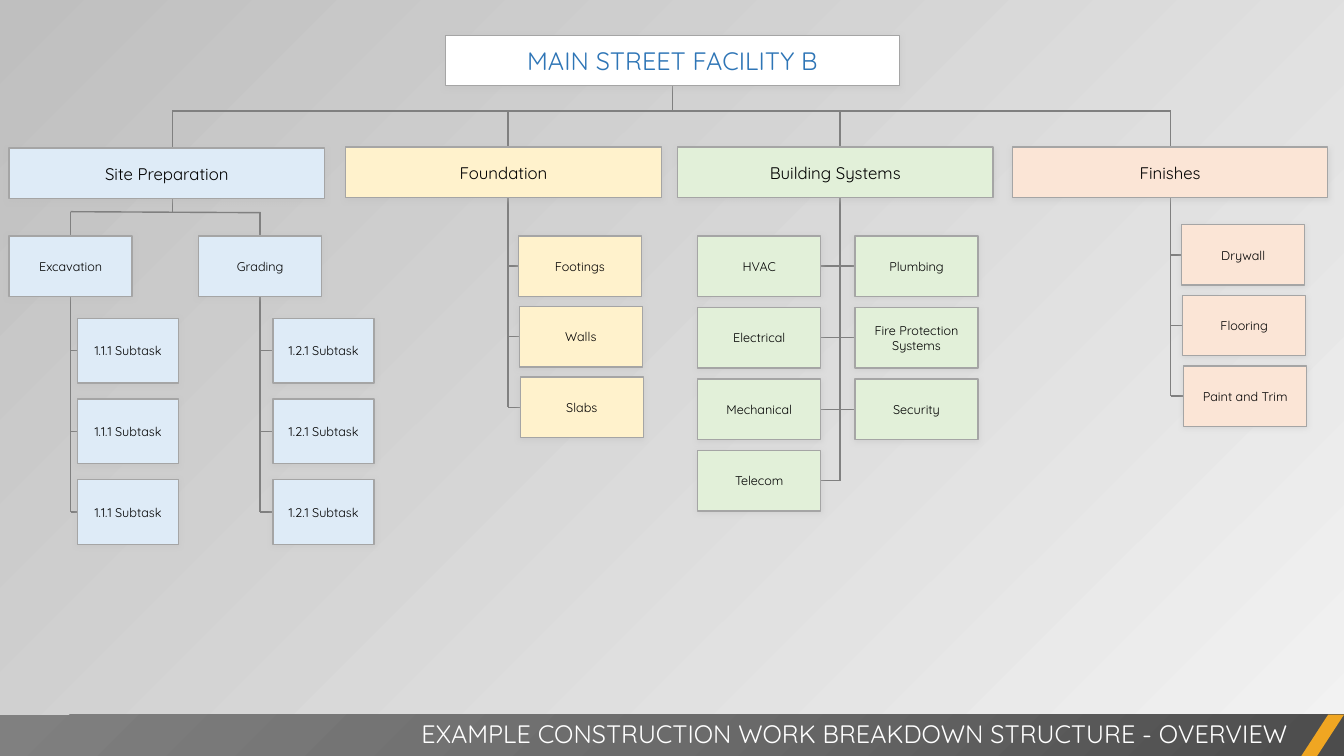
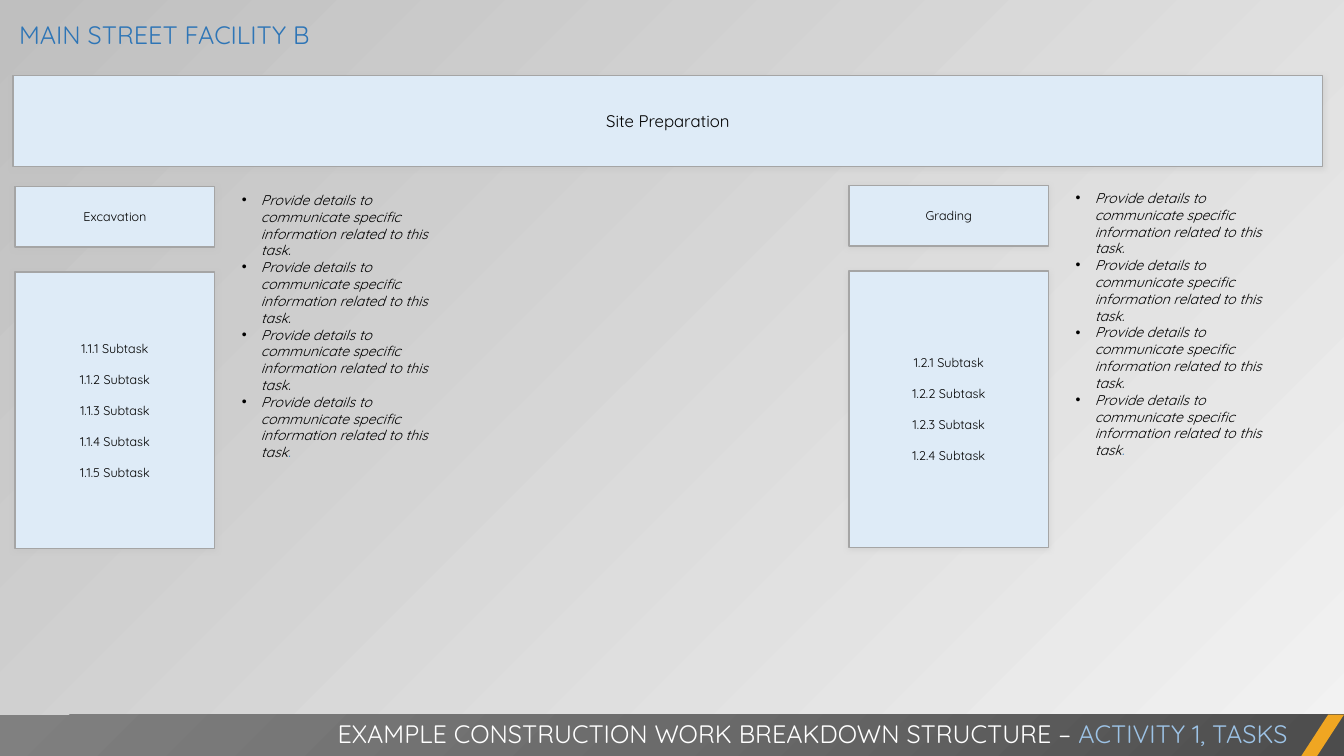
from lxml import etree
from pptx import Presentation
from pptx.dml.color import RGBColor
from pptx.enum.shapes import MSO_CONNECTOR, MSO_SHAPE
from pptx.enum.text import MSO_ANCHOR, PP_ALIGN
from pptx.oxml import parse_xml
from pptx.oxml.ns import qn
from pptx.util import Inches, Pt

RECT = MSO_SHAPE.RECTANGLE
PARALLELOGRAM = MSO_SHAPE.PARALLELOGRAM
STRAIGHT = MSO_CONNECTOR.STRAIGHT
LEFT, CENTER, RIGHT = PP_ALIGN.LEFT, PP_ALIGN.CENTER, PP_ALIGN.RIGHT
MIDDLE = MSO_ANCHOR.MIDDLE

FONT = "Quicksand"
COLORS = {
    "site": "DEEBF7",
    "foundation": "FFF2CC",
    "building": "E2F0D9",
    "finishes": "FBE5D6",
    "white": "FFFFFF",
    "black": "000000",
    "title": "2E75B6",
    "accent": "9DC3E6",
    "border": "A5A5A5",
    "connector": "808080",
    "shadow": "BFBFBF",
    "bg_light": "F2F2F2",
    "bg_dark": "BFBFBF",
    "band_dark": "4C4C4C",
    "band_mid": "6B6B6B",
    "band_light": "808080",
    "corner": "F0A622",
}
RGB = {name: RGBColor.from_string(value) for name, value in COLORS.items()}
NS = 'xmlns:a="http://schemas.openxmlformats.org/drawingml/2006/main"'
SHADOW = (
    f'<a:outerShdw {NS} blurRad="50800" dist="12700" dir="5400000">'
    f'<a:srgbClr val="{COLORS["shadow"]}"><a:alpha val="40000"/></a:srgbClr></a:outerShdw>'
)
BAND_STOPS = "".join(
    f'<a:gs pos="{pos}"><a:srgbClr val="{COLORS[name]}"/></a:gs>'
    for pos, name in [(0, "band_dark"), (50000, "band_mid"), (100000, "band_light")]
)
BAND_FILL = (
    f'<a:gradFill {NS} rotWithShape="1"><a:gsLst>{BAND_STOPS}</a:gsLst>'
    '<a:path path="circle"><a:fillToRect l="100000" t="100000"/></a:path></a:gradFill>'
)


def write_text(tf, lines, size, color, align, gap=0):
    tf.word_wrap = True
    for i, line in enumerate(lines):
        p = tf.paragraphs[0] if i == 0 else tf.add_paragraph()
        p.add_run().text = line
        p.alignment = align
        p.font.name = FONT
        p.font.size = Pt(size)
        p.font.color.rgb = RGB[color]
        if i and gap:
            p.space_before = Pt(gap)


def add_box(s, x, y, w, h, lines, fill, size=9, color="black", gap=0):
    sp = s.shapes.add_shape(RECT, Inches(x), Inches(y), Inches(w), Inches(h))
    sp.fill.solid()
    sp.fill.fore_color.rgb = RGB[fill]
    sp.line.color.rgb = RGB["border"]
    sp.line.width = Pt(1)
    sp.shadow.inherit = False
    sp._element.spPr.find(qn("a:effectLst")).append(parse_xml(SHADOW))
    sp.text_frame.vertical_anchor = MIDDLE
    write_text(sp.text_frame, lines, size, color, CENTER, gap)


prs = Presentation()
prs.slide_width = Inches(13.33)
prs.slide_height = Inches(7.5)

FOOTERS = [
    ("EXAMPLE CONSTRUCTION WORK BREAKDOWN STRUCTURE - OVERVIEW", ""),
    ("EXAMPLE CONSTRUCTION WORK BREAKDOWN STRUCTURE – ", "ACTIVITY 1, TASKS"),
]
for footer, activity in FOOTERS:
    s = prs.slides.add_slide(prs.slide_layouts[6])
    bg = s.background.fill
    bg.gradient()
    bg.gradient_angle = 135
    for stop, name, pos in zip(bg.gradient_stops, ["bg_light", "bg_dark"], [0, 1]):
        stop.color.rgb = RGB[name]
        stop.position = pos
    light = s._element.find(".//" + qn("p:bgPr")).find(".//" + qn("a:srgbClr"))
    etree.SubElement(light, qn("a:alpha")).set("val", "40000")

    band = s.shapes.add_shape(RECT, 0, Inches(7.09), prs.slide_width, Inches(0.42))
    band.line.fill.background()
    band.shadow.inherit = False
    band._element.spPr.find(qn("a:prstGeom")).addnext(parse_xml(BAND_FILL))

    corner = s.shapes.add_shape(
        PARALLELOGRAM, Inches(12.9), Inches(7.09), Inches(0.43), Inches(0.42))
    corner.adjustments[0] = 0.65
    corner.fill.solid()
    corner.fill.fore_color.rgb = RGB["corner"]
    corner.line.fill.background()
    corner.shadow.inherit = False

    tf = s.shapes.add_textbox(0, Inches(7.08), Inches(12.87), Inches(0.4)).text_frame
    write_text(tf, [footer], 18, "white", RIGHT)
    if activity:
        r = tf.paragraphs[0].add_run()
        r.text = activity
        r.font.color.rgb = RGB["accent"]

overview, tasks = prs.slides

BRANCHES = [
    ("Site Preparation", "site", 0.09, 1.47),
    ("Foundation", "foundation", 3.43, 1.46),
    ("Building Systems", "building", 6.72, 1.46),
    ("Finishes", "finishes", 10.04, 1.46),
]
SUBTASK, LEAF = (1, 0.64), (1.22, 0.6)
COLUMNS = [
    ("site", 0.7, 0.77, 3.16, 0.8, 0, SUBTASK, ["1.1.1 Subtask"] * 3),
    ("site", 2.58, 2.71, 3.16, 0.8, 0, SUBTASK, ["1.2.1 Subtask"] * 3),
    ("foundation", 5.04, 5.14, 2.34, 0.7, 0.01, LEAF, ["Footings", "Walls", "Slabs"]),
    ("building", 8.33, 6.92, 2.34, 0.71, 0, LEAF,
     ["HVAC", "Electrical", "Mechanical", "Telecom"]),
    ("building", 8.33, 8.48, 2.34, 0.71, 0, LEAF,
     ["Plumbing", "Fire Protection Systems", "Security"]),
    ("finishes", 11.61, 11.72, 2.23, 0.7, 0.01, LEAF,
     ["Drywall", "Flooring", "Paint and Trim"]),
]
lines = [
    (6.67, 0.59, 6.67, 1.1),
    (1.71, 1.1, 11.61, 1.1),
    (1.71, 1.1, 1.71, 2.1),
    (0.7, 2.1, 2.58, 2.11),
    (0.7, 2.1, 0.7, 5.08),
    (2.58, 2.1, 2.58, 5.08),
    (5.04, 1.1, 5.04, 4.04),
    (8.33, 1.1, 8.33, 4.77),
    (11.61, 1.1, 11.61, 3.93),
]
boxes = []
for fill, spine, x, y, step, drift, (w, h), labels in COLUMNS:
    for i, label in enumerate(labels):
        left, top = x + i * drift, y + i * step
        lines.append((spine, top + h / 2, left + w / 2, top + h / 2))
        boxes.append((left, top, w, h, [label], fill))

for line in lines:
    connector = overview.shapes.add_connector(STRAIGHT, *[Inches(v) for v in line])
    connector.line.color.rgb = RGB["connector"]
    connector.line.width = Pt(1)
    etree.SubElement(connector._element.spPr, qn("a:effectLst"))

add_box(overview, 4.42, 0.35, 4.5, 0.5, ["MAIN STREET FACILITY B"], "white", 18, "title")
for label, fill, x, y in BRANCHES:
    add_box(overview, x, y, 3.13, 0.5, [label], fill, 12)
for label, x in [("Excavation", 0.09), ("Grading", 1.97)]:
    add_box(overview, x, 2.34, *LEAF, [label], "site")
for box in boxes:
    add_box(overview, *box)

tf = tasks.shapes.add_textbox(
    Inches(0.09), Inches(0.14), Inches(10.11), Inches(0.4)).text_frame
write_text(tf, ["MAIN STREET FACILITY B"], 18, "title", LEFT)
add_box(tasks, 0.13, 0.75, 12.99, 0.9, ["Site Preparation"], "site", 12)

DETAIL = "Provide details to communicate specific information related to this task"
TASKS = [
    ("Excavation", "1.1", 5, 0.15, 1.85, 1.85),
    ("Grading", "1.2", 4, 8.42, 1.84, 1.83),
]
for label, number, count, x, y, details_y in TASKS:
    add_box(tasks, x, y, 1.98, 0.6, [label], "site")
    subtasks = [f"{number}.{i} Subtask" for i in range(1, count + 1)]
    add_box(tasks, x, y + 0.85, 1.98, 2.74, subtasks, "site", gap=11.25)

    tf = tasks.shapes.add_textbox(
        Inches(x + 2.15), Inches(details_y), Inches(2.06), Inches(3)).text_frame
    write_text(tf, [DETAIL + "."] * 3 + [DETAIL], 10, "black", LEFT)
    r = tf.paragraphs[-1].add_run()
    r.text = "."
    r.font.color.rgb = RGB["title"]
    for p in tf.paragraphs:
        p.font.italic = True
        pPr = p._p.get_or_add_pPr()
        pPr.set("marL", str(Inches(0.19)))
        pPr.set("indent", str(-Inches(0.19)))
        pPr.insert(0, parse_xml(f'<a:buChar {NS} char="•"/>'))
        pPr.insert(0, parse_xml(f'<a:buFont {NS} typeface="Arial"/>'))

prs.save("out.pptx")
